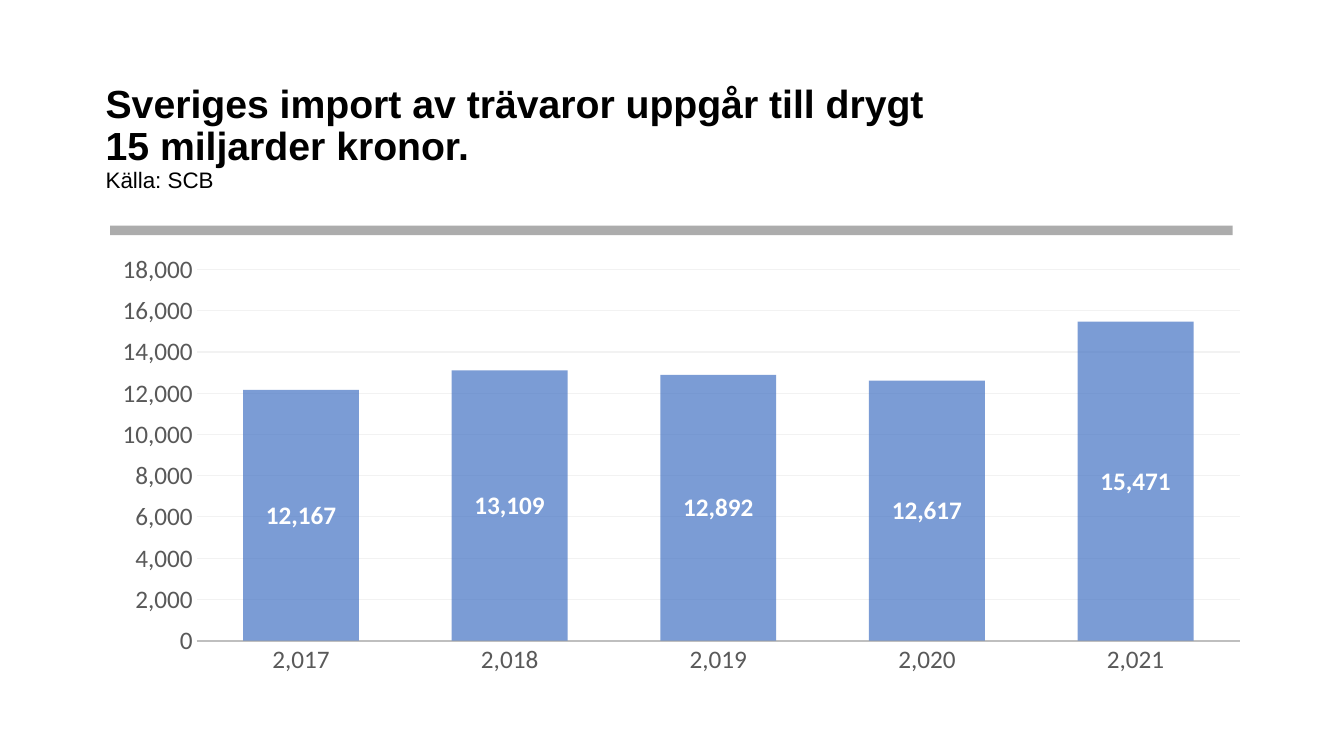
from dataclasses import dataclass
from typing import Any

import pptx
import pptx.chart.data
import pptx.dml.color
import pptx.enum.chart
import pptx.enum.shapes
import pptx.enum.text
import pptx.oxml.ns
import pptx.oxml.xmlchemy
import pptx.util

PX = 9525
COLORS = {
    "title": "000000",
    "rule": "808080",
    "bar": "4472C4",
    "label": "FFFFFF",
    "axis_text": "595959",
    "axis_line": "BFBFBF",
    "grid": "F2F2F2",
}


@dataclass(frozen=True)
class Box:
    left: int
    top: int
    width: int
    height: int

    def emu(self) -> tuple[int, int, int, int]:
        return self.left * PX, self.top * PX, self.width * PX, self.height * PX


@dataclass(frozen=True)
class TitleLine:
    text: str
    size: int
    bold: bool


@dataclass(frozen=True)
class ImportYear:
    year: str
    value: int


TITLE_BOX = Box(91, 63, 1097, 139)
RULE_BOX = Box(105, 215, 1069, 9)
CHART_BOX = Box(88, 192, 1104, 498)
PLOT_AREA = {"x": 0.09, "y": 0.13, "w": 0.9, "h": 0.71}

TITLE_LINES = [
    TitleLine("Sveriges import av trävaror uppgår till drygt", 28, True),
    TitleLine("15 miljarder kronor.", 28, True),
    TitleLine("Källa: SCB", 16, False),
]
IMPORTS = [
    ImportYear("2,017", 12167),
    ImportYear("2,018", 13109),
    ImportYear("2,019", 12892),
    ImportYear("2,020", 12617),
    ImportYear("2,021", 15471),
]


def rgb(name: str) -> pptx.dml.color.RGBColor:
    return pptx.dml.color.RGBColor.from_string(COLORS[name])


def set_font(font: Any, *, size: int, color: str, name: str = "Calibri", bold: bool = False) -> None:
    font.name = name
    font.size = pptx.util.Pt(size)
    font.bold = bold
    font.color.rgb = rgb(color)


def add_text(p: Any, text: str, **style: Any) -> None:
    r = p.add_run()
    r.text = text
    set_font(r.font, **style)


def new_element(tag: str, value: Any = None) -> Any:
    element = pptx.oxml.xmlchemy.OxmlElement(tag)
    if value is not None:
        element.set("val", str(value))
    return element


def set_fill(fill: Any, element: Any, color: str, opacity: int) -> None:
    fill.solid()
    fill.fore_color.rgb = rgb(color)
    clr = next(element.iter(pptx.oxml.ns.qn("a:srgbClr")))
    clr.append(new_element("a:alpha", opacity * 1000))


def set_line(line: Any, color: str, width: float) -> None:
    line.color.rgb = rgb(color)
    line.width = pptx.util.Pt(width)


def write_title(sp: Any) -> None:
    sp.left, sp.top, sp.width, sp.height = TITLE_BOX.emu()
    tf = sp.text_frame
    tf.word_wrap = True
    tf.auto_size = pptx.enum.text.MSO_AUTO_SIZE.NONE
    tf.vertical_anchor = pptx.enum.text.MSO_ANCHOR.MIDDLE
    p = tf.paragraphs[0]
    p.alignment = pptx.enum.text.PP_ALIGN.LEFT
    p.line_spacing = 0.9
    for i, line in enumerate(TITLE_LINES):
        if i:
            p.add_line_break()
        add_text(p, line.text, size=line.size, bold=line.bold, name="Arial", color="title")


def add_rule(slide: Any) -> None:
    sp = slide.shapes.add_shape(pptx.enum.shapes.MSO_SHAPE.RECTANGLE, *RULE_BOX.emu())
    sp.shadow.inherit = False
    sp.line.fill.background()
    set_fill(sp.fill, sp._element, "rule", 65)


def set_plot_area(chart: Any) -> None:
    plot_area = chart._chartSpace.chart.plotArea
    layout = plot_area.find(pptx.oxml.ns.qn("c:layout"))
    if layout is None:
        layout = new_element("c:layout")
        plot_area.insert(0, layout)
    manual = new_element("c:manualLayout")
    layout.append(manual)
    settings = {"layoutTarget": "inner", "xMode": "edge", "yMode": "edge", **PLOT_AREA}
    for tag, value in settings.items():
        manual.append(new_element(f"c:{tag}", value))


def format_axes(chart: Any) -> None:
    for axis in (chart.category_axis, chart.value_axis):
        axis.major_tick_mark = pptx.enum.chart.XL_TICK_MARK.NONE
        axis.minor_tick_mark = pptx.enum.chart.XL_TICK_MARK.NONE
        set_font(axis.tick_labels.font, size=18, color="axis_text")
    set_line(chart.category_axis.format.line, "axis_line", 1.25)
    axis = chart.value_axis
    axis.minimum_scale, axis.maximum_scale, axis.major_unit = 0, 18000, 2000
    axis.tick_labels.number_format = "#,##0"
    axis.tick_labels.number_format_is_linked = False
    axis.format.line.fill.background()
    set_line(axis.major_gridlines.format.line, "grid", 0.75)


def add_import_chart(slide: Any) -> None:
    data = pptx.chart.data.CategoryChartData(number_format="#,##0")
    data.categories = [item.year for item in IMPORTS]
    data.add_series("Series 1", [item.value for item in IMPORTS])
    kind = pptx.enum.chart.XL_CHART_TYPE.COLUMN_CLUSTERED
    chart = slide.shapes.add_chart(kind, *CHART_BOX.emu(), data).chart
    chart.has_title = False
    chart.has_legend = False
    set_font(chart.font, size=18, color="title", bold=True)
    set_plot_area(chart)
    format_axes(chart)

    plot = chart.plots[0]
    plot.vary_by_categories = False
    plot.gap_width = 80
    plot.overlap = 25
    series = plot.series[0]
    set_fill(series.format.fill, series._element, "bar", 70)
    labels = series.data_labels
    labels.show_value = True
    labels.position = pptx.enum.chart.XL_LABEL_POSITION.CENTER
    labels.number_format = "#,##0"
    labels.number_format_is_linked = False
    set_font(labels.font, size=18, color="label", bold=True)


def main() -> None:
    prs = pptx.Presentation()
    prs.slide_width, prs.slide_height = 1280 * PX, 720 * PX
    slide = prs.slides.add_slide(prs.slide_layouts.get_by_name("Title Only"))
    write_title(slide.shapes.title)
    add_rule(slide)
    add_import_chart(slide)
    prs.save("out.pptx")


if __name__ == "__main__":
    main()
